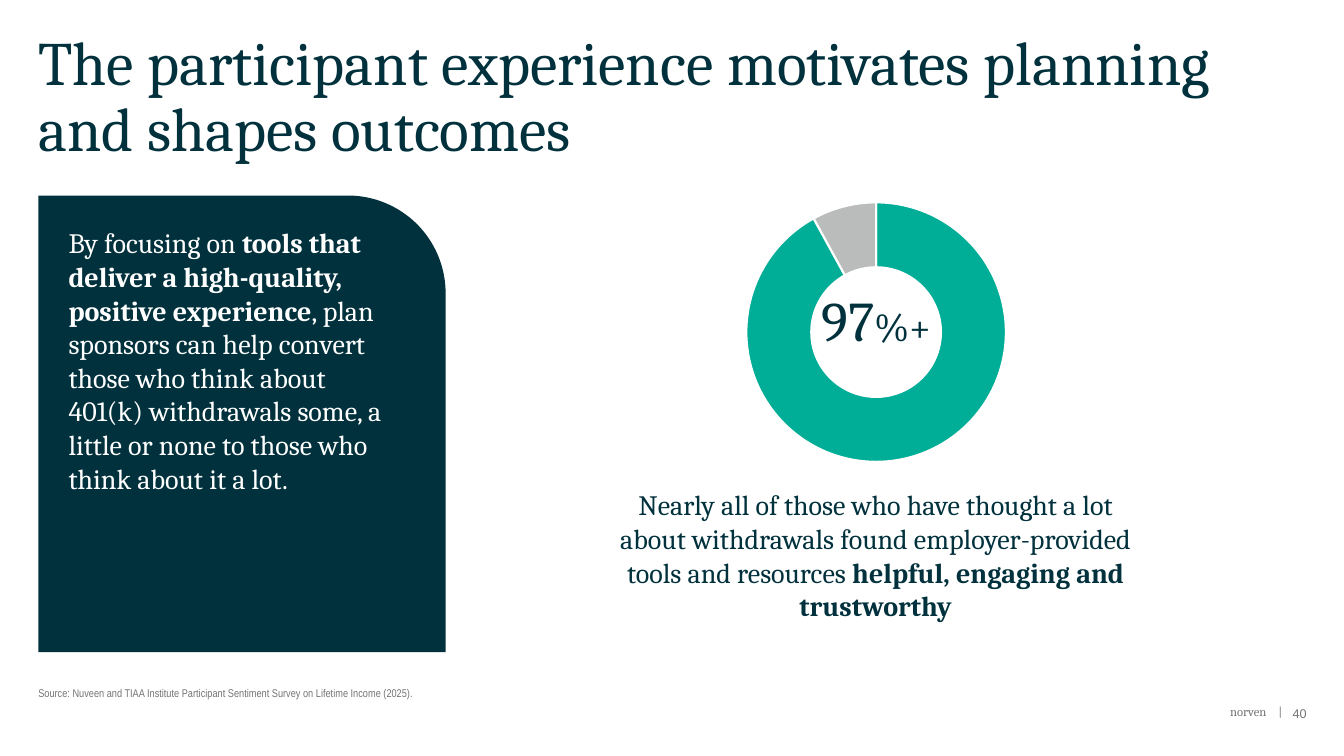
from dataclasses import dataclass

from lxml.etree import SubElement
from pptx import Presentation
from pptx.chart.data import CategoryChartData
from pptx.dml.color import RGBColor
from pptx.enum.chart import XL_CHART_TYPE as ChartType
from pptx.enum.shapes import MSO_SHAPE as Preset
from pptx.enum.text import MSO_ANCHOR as Anchor, MSO_AUTO_SIZE as AutoSize, PP_ALIGN as Align
from pptx.oxml.ns import qn
from pptx.slide import Slide
from pptx.text.text import TextFrame
from pptx.util import Emu, Pt

EMU_PER_PX = 9144
COLORS = {
    "navy": "00313C",
    "teal": "00AD97",
    "silver": "BABCBC",
    "gray": "747476",
    "white": "FFFFFF",
}


@dataclass(frozen=True)
class Area:
    left: int
    top: int
    width: int
    height: int

    def emu(self) -> tuple[Emu, Emu, Emu, Emu]:
        return px(self.left), px(self.top), px(self.width), px(self.height)


@dataclass(frozen=True)
class Span:
    text: str
    size: int
    bold: bool = False


@dataclass(frozen=True)
class TextStyle:
    color: str = "navy"
    font: str = "Cambria"
    align: Align = Align.LEFT
    anchor: Anchor = Anchor.TOP
    inset_x: int = 0
    inset_y: int = 0
    line_spacing: float = 1.0
    tab_stop: int = 0


@dataclass(frozen=True)
class TextItem:
    area: Area
    spans: tuple[Span, ...]
    style: TextStyle


GRAY_CAMBRIA = TextStyle(color="gray", tab_stop=48)
CENTERED = TextStyle(align=Align.CENTER, inset_x=10, inset_y=5)
TITLE = TextItem(
    Area(38, 32, 1260, 134),
    (Span("The participant experience motivates planning and shapes outcomes", 44),),
    TextStyle(line_spacing=0.9),
)
PANEL = TextItem(
    Area(38, 194, 404, 453),
    (
        Span("By focusing on ", 20),
        Span("tools that deliver a high-quality, positive experience", 20, True),
        Span(", plan sponsors can help convert those who think about 401(k) withdrawals "
             "some, a little or none to those who think about it a lot.", 20),
    ),
    TextStyle(color="white", inset_x=30, inset_y=30),
)
CHART_AREA = Area(678, 187, 382, 285)
TEXT_BOXES = (
    TextItem(
        Area(781, 278, 176, 85),
        (Span("97", 40), Span("%+", 28)),
        CENTERED,
    ),
    TextItem(
        Area(588, 479, 561, 145),
        (
            Span("Nearly all of those who have thought a lot about withdrawals found "
                 "employer-provided tools and resources ", 20),
            Span("helpful, engaging and trustworthy", 20, True),
        ),
        CENTERED,
    ),
    TextItem(
        Area(38, 654, 1260, 40),
        (Span("Source: Nuveen and TIAA Institute Participant Sentiment Survey on "
              "Lifetime Income (2025).", 8),),
        TextStyle(color="gray", font="Arial Narrow", anchor=Anchor.BOTTOM),
    ),
    TextItem(Area(1220, 698, 52, 20), (Span("norven\t|", 9),), GRAY_CAMBRIA),
    TextItem(
        Area(1262, 700, 34, 40),
        (Span("40", 9),),
        TextStyle(color="gray", font="Arial", align=Align.RIGHT),
    ),
)


def px(length: int) -> Emu:
    return Emu(length * EMU_PER_PX)


def color(name: str) -> RGBColor:
    return RGBColor.from_string(COLORS[name])


def write_text(frame: TextFrame, item: TextItem) -> None:
    style = item.style
    frame.word_wrap = True
    frame.auto_size = AutoSize.NONE
    frame.vertical_anchor = style.anchor
    frame.margin_left = frame.margin_right = px(style.inset_x)
    frame.margin_top = frame.margin_bottom = px(style.inset_y)
    para = frame.paragraphs[0]
    para.alignment = style.align
    para.line_spacing = style.line_spacing
    if style.tab_stop:
        tabs = SubElement(para._p.get_or_add_pPr(), qn("a:tabLst"))
        SubElement(tabs, qn("a:tab"), pos=str(px(style.tab_stop)), algn="l")
    for span in item.spans:
        run = para.add_run()
        run.text = span.text
        run.font.name = style.font
        run.font.size = Pt(span.size)
        run.font.bold = span.bold
        run.font.color.rgb = color(style.color)


def add_title(page: Slide) -> None:
    title = page.shapes.title
    title.left, title.top, title.width, title.height = TITLE.area.emu()
    write_text(title.text_frame, TITLE)


def add_text_box(page: Slide, item: TextItem) -> None:
    box = page.shapes.add_textbox(*item.area.emu())
    write_text(box.text_frame, item)


def add_panel(page: Slide) -> None:
    panel = page.shapes.add_shape(Preset.ROUND_1_RECTANGLE, *PANEL.area.emu())
    panel.adjustments[0] = 0.24
    panel.shadow.inherit = False
    panel.fill.solid()
    panel.fill.fore_color.rgb = color("navy")
    panel.line.fill.background()
    write_text(panel.text_frame, PANEL)


def add_doughnut(page: Slide) -> None:
    data = CategoryChartData()
    data.categories = ["1", "2"]
    data.add_series("Series 1", (92, 8))
    chart = page.shapes.add_chart(ChartType.DOUGHNUT, *CHART_AREA.emu(), data).chart
    chart.has_legend = False
    chart.has_title = False
    chart.font.name = "Cambria"
    chart.font.size = Pt(10)
    chart.font.color.rgb = color("navy")
    plot = chart.plots[0]
    plot.vary_by_categories = True
    chart.element.find(".//" + qn("c:holeSize")).set("val", "70")
    for index, name in enumerate(("teal", "silver")):
        slice_format = plot.series[0].points[index].format
        slice_format.fill.solid()
        slice_format.fill.fore_color.rgb = color(name)
        slice_format.line.color.rgb = color("white")
        slice_format.line.width = Pt(1.5)


def main() -> None:
    deck = Presentation()
    deck.slide_width, deck.slide_height = px(1333), px(750)
    page = deck.slides.add_slide(deck.slide_layouts.get_by_name("Title Only"))
    add_title(page)
    add_panel(page)
    add_doughnut(page)
    for item in TEXT_BOXES:
        add_text_box(page, item)
    deck.save("out.pptx")


if __name__ == "__main__":
    main()
